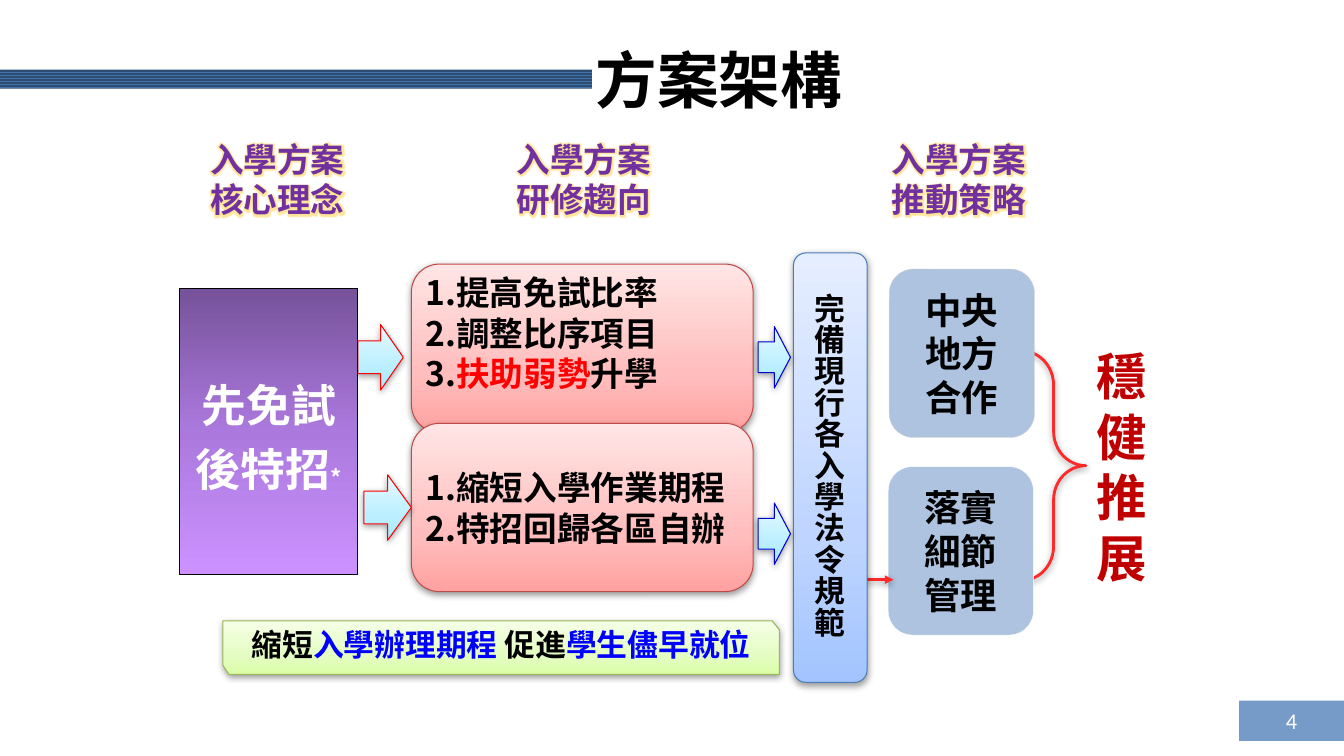
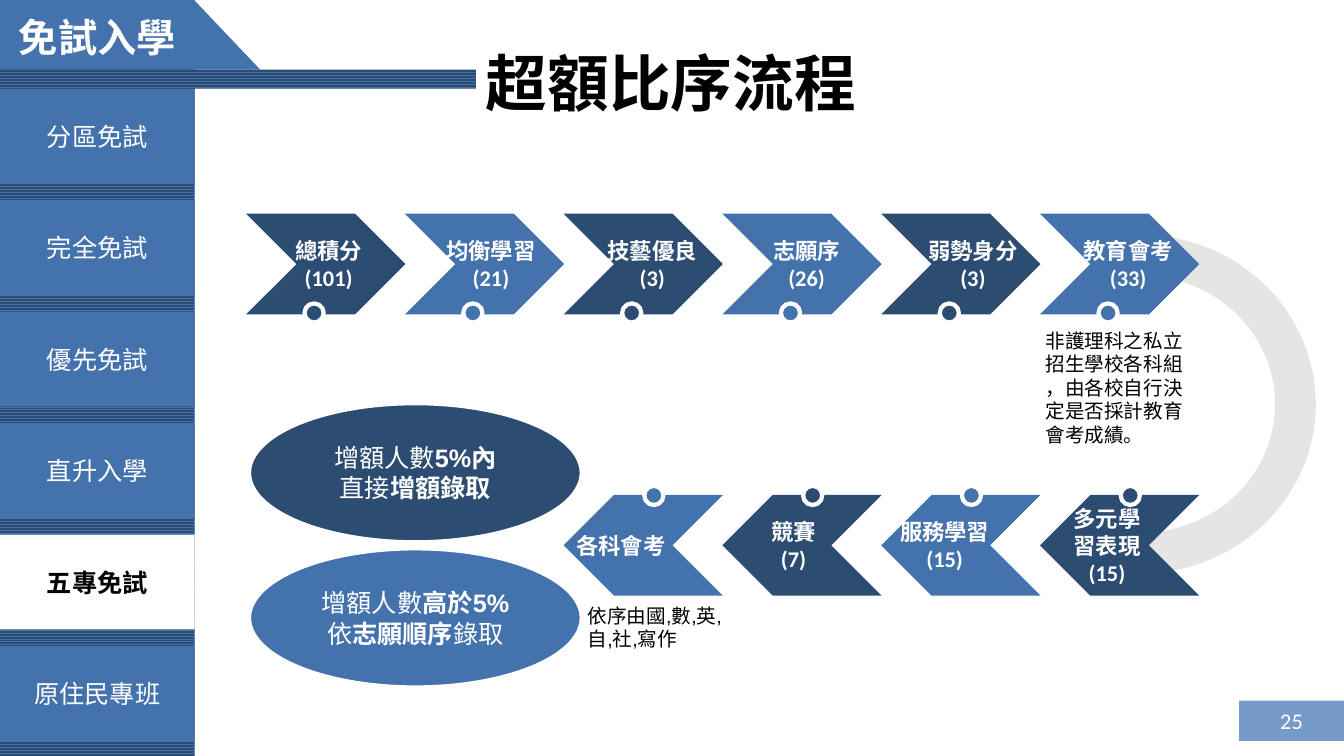
from copy import deepcopy

from pptx import Presentation
from pptx.dml.color import RGBColor
from pptx.enum.dml import MSO_PATTERN
from pptx.enum.shapes import MSO_CONNECTOR, MSO_SHAPE
from pptx.enum.text import MSO_ANCHOR, PP_ALIGN
from pptx.oxml import parse_xml
from pptx.oxml.ns import nsdecls, qn
from pptx.util import Inches, Pt

HUES = {
    "white": "FFFFFF", "black": "000000", "navy": "2D4C72", "blue": "4472AC",
    "sky": "769BC9", "mist": "ADC3DF", "gray": "E5E5E5", "silver": "CCCCCC",
    "red": "FF0000", "coral": "FE2929", "wine": "C00000", "plum": "7030A0",
    "ink": "0000FF", "deep": "0000CC", "brick": "BE4B48", "steel": "4A7EBB",
    "leaf": "98B954", "gold": "FFC000",
}
# Three stops each: place in percent and colour, then the angle
BLENDS = {
    "pink": (((0, "FFA2A1"), (35, "FFBEBD"), (100, "FFE5E5")), 270),
    "azure": (((0, "A3C4FF"), (35, "BFD5FF"), (100, "E5EEFF")), 270),
    "aqua": (((0, "9EEAFF"), (35, "BBEFFF"), (100, "E4F9FF")), 270),
    "lime": (((0, "DAFDA7"), (35, "E4FDC2"), (100, "F5FFE6")), 270),
    "violet": (((0, "76529A"), (50, "AB79DD"), (100, "CC91FF")), 90),
}
NOTO = "Noto Sans CJK SC"
NS = nsdecls("a")


def hue(name):
    return RGBColor.from_string(HUES[name])


def tint(name, alpha):
    return (f'<a:srgbClr val="{HUES[name]}">'
            f'<a:alpha val="{alpha * 1000}"/></a:srgbClr>')


class Deck:
    """Holds the shared style and the slide being drawn."""

    def __init__(self):
        self.file = Presentation()
        self.file.slide_width = Inches(13.33)
        self.file.slide_height = Inches(7.5)
        self.slide = None

    def start(self):
        self.slide = self.file.slides.add_slide(self.file.slide_layouts[6])

    def frame(self, title, page, at, band, face):
        """Draw the stripe, title and page number that all slides share."""
        self.shape(MSO_SHAPE.RECTANGLE, (0, 0.69, band, 0.19), "stripe")
        self.label(at, title, 44, "black", True, face=face, inset=0,
                   anchor=MSO_ANCHOR.TOP)
        foot = self.shape(MSO_SHAPE.RECTANGLE, (12.29, 6.95, 1.04, 0.4), "sky")
        self.letter(foot, page, 16, face="Calibri")

    def shape(self, kind, at, fill=None, line=None, width=0.75, cast=False):
        item = self.slide.shapes.add_shape(kind, *map(Inches, at))
        return self.paint(item, fill, line, width, cast)

    def outline(self, points, *look):
        first, *rest = [tuple(map(Inches, point)) for point in points]
        pen = self.slide.shapes.build_freeform(*first)
        pen.add_line_segments(rest, close=True)
        return self.paint(pen.convert_to_shape(), *look)

    def paint(self, item, fill, line=None, width=0.75, cast=False):
        if fill is None:
            item.fill.background()
        elif fill == "stripe":
            item.fill.patterned()
            item.fill.pattern = MSO_PATTERN.ZIG_ZAG
            item.fill.fore_color.rgb = hue("blue")
            item.fill.back_color.rgb = hue("navy")
        elif fill in BLENDS:
            self.blend(item, *BLENDS[fill])
        else:
            item.fill.solid()
            item.fill.fore_color.rgb = hue(fill)
        if line:
            item.line.color.rgb = hue(line)
            item.line.width = Pt(width)
        else:
            item.line.fill.background()
        item.shadow.inherit = False
        if cast:
            self.cast(item._element.spPr.find(qn("a:effectLst")))
        return item

    def blend(self, item, stops, angle):
        item.fill.gradient()
        item.fill.gradient_angle = 360 - angle
        marks = "".join(f'<a:gs pos="{pos * 1000}"><a:srgbClr val="{tone}"/></a:gs>'
                        for pos, tone in stops)
        grad = item._element.spPr.find(qn("a:gradFill"))
        grad.replace(grad.find(qn("a:gsLst")),
                     parse_xml(f"<a:gsLst {NS}>{marks}</a:gsLst>"))

    def cast(self, effects):
        """Put the soft drop shadow in an effect list."""
        effects.append(parse_xml(
            f'<a:outerShdw {NS} blurRad="63500" dist="20000" dir="5400000" '
            f'rotWithShape="0">{tint("black", 38)}</a:outerShdw>'))

    def arrow(self, start, end, color, width):
        line = self.slide.shapes.add_connector(
            MSO_CONNECTOR.STRAIGHT, *map(Inches, start + end))
        line.line.color.rgb = hue(color)
        line.line.width = Pt(width)
        line.line._get_or_add_ln().append(
            parse_xml(f'<a:tailEnd {NS} type="triangle"/>'))
        effects = parse_xml(f"<a:effectLst {NS}/>")
        line._element.spPr.append(effects)
        self.cast(effects)

    def label(self, at, text, size, color="white", bold=False, **look):
        box = self.slide.shapes.add_textbox(*map(Inches, at))
        return self.letter(box, text, size, color, bold, **look)

    def letter(self, item, text, size, color="white", bold=False, face=NOTO,
               align=PP_ALIGN.CENTER, anchor=MSO_ANCHOR.MIDDLE, inset=None,
               wrap=True, lead=None):
        """Set the text of a shape and its look."""
        frame = item.text_frame
        frame.text = text
        frame.word_wrap = wrap
        frame.vertical_anchor = anchor
        if inset is not None:
            frame.margin_left = frame.margin_right = Inches(inset)
            frame.margin_top = frame.margin_bottom = 0
        for para in frame.paragraphs:
            para.alignment = align
            if lead:
                para.line_spacing = lead
            for run in para.runs:
                font = run.font
                font.size, font.bold, font.name = Pt(size), bold, face
                font.color.rgb = hue(color)
                run._r.rPr.find(qn("a:latin")).addnext(
                    parse_xml(f'<a:ea {NS} typeface="{NOTO}"/>'))
        return item

    def mark(self, item, word, color=None, size=None, bold=None):
        """Give one word in the text a look of its own."""
        for para in item.text_frame.paragraphs:
            for run in para.runs:
                head, hit, tail = run.text.partition(word)
                if not hit:
                    continue
                for text in filter(None, (tail, hit)):
                    twin = deepcopy(run._r)
                    twin.text = text
                    run._r.addnext(twin)
                run.text = head
                if not head:
                    para._p.remove(run._r)
            for run in para.runs:
                if run.text == word:
                    if color:
                        run.font.color.rgb = hue(color)
                    if size:
                        run.font.size = Pt(size)
                    if bold is not None:
                        run.font.bold = bold

    def glow(self, item):
        for para in item.text_frame.paragraphs:
            for run in para.runs:
                run._r.rPr.find(qn("a:solidFill")).addnext(parse_xml(
                    f'<a:effectLst {NS}><a:glow rad="63500">'
                    f'{tint("gold", 40)}</a:glow></a:effectLst>'))


def draw_plan(deck):
    deck.start()
    deck.frame("方案架構", "4", (3.4, 0.42, 7.46, 0.74), 5.87, "Arial")

    brace = deck.shape(MSO_SHAPE.RIGHT_BRACE, (10.13, 3.48, 0.64, 2.28),
                       None, "coral", 2, True)
    brace.adjustments[0] = 0.53
    deck.label((10.71, 3.11, 0.84, 3.03), "穩健推展", 36, "wine", True, inset=0)

    trends = (
        (2.62, "1.提高免試比率\n2.調整比序項目\n3.扶助弱勢升學", MSO_ANCHOR.TOP),
        (4.2, "1.縮短入學作業期程\n2.特招回歸各區自辦", MSO_ANCHOR.MIDDLE),
    )
    for top, text, anchor in trends:
        card = deck.shape(MSO_SHAPE.ROUNDED_RECTANGLE, (4.08, top, 3.39, 1.67),
                          "pink", "brick", cast=True)
        deck.letter(card, text, 24, "black", True, align=PP_ALIGN.LEFT,
                    anchor=anchor, inset=0.06)
        deck.mark(card, "扶助弱勢", "red")

    tasks = ((8.82, 2.67, "中央\n地方\n合作", "silver"),
             (8.81, 4.63, "落實\n細節\n管理", "white"))
    for left, top, text, edge in tasks:
        card = deck.shape(MSO_SHAPE.ROUNDED_RECTANGLE, (left, top, 1.44, 1.67),
                          "mist", edge, 0.25)
        deck.letter(card, text, 26, "black", True, inset=0)
    deck.arrow((8.56, 5.75), (8.86, 5.75), "coral", 2)

    for left, text in ((1.78, "核心理念"), (4.82, "研修趨向"), (8.54, "推動策略")):
        head = deck.label((left, 1.33, 1.94, 0.91), "入學方案\n" + text, 24,
                          "plum", True, anchor=MSO_ANCHOR.TOP)
        deck.glow(head)

    law = deck.shape(MSO_SHAPE.FLOWCHART_ALTERNATE_PROCESS,
                     (7.87, 2.51, 0.73, 4.26), "azure", "steel", cast=True)
    deck.letter(law, "完備現行各入學法令規範", 22, "black", True, lead=0.85)

    for *at, edge in ((3.55, 3.22, 0.45, 0.65, "red"),
                      (3.61, 4.71, 0.47, 0.65, "red"),
                      (7.52, 3.24, 0.32, 0.61, "deep"),
                      (7.52, 4.99, 0.32, 0.61, "deep")):
        deck.shape(MSO_SHAPE.RIGHT_ARROW, at, "aqua", edge, cast=True)

    goal = deck.outline(((2.21, 6.16), (7.66, 6.16), (7.73, 6.25), (7.73, 6.69),
                         (2.27, 6.69), (2.21, 6.6)), "lime", "leaf", 0.75, True)
    deck.letter(goal, "縮短入學辦理期程 促進學生儘早就位", 22, "black", True, lead=0.8)
    for word in ("入學辦理期程", "學生儘早就位"):
        deck.mark(goal, word, "ink")

    core = deck.shape(MSO_SHAPE.RECTANGLE, (1.78, 2.86, 1.77, 2.84),
                      "violet", "black")
    deck.letter(core, "先免試\n後特招*", 32, bold=True, wrap=False, lead=1.2)
    deck.mark(core, "*", size=16)


def draw_menu(deck):
    deck.shape(MSO_SHAPE.ISOSCELES_TRIANGLE, (1.27, 0, 1.31, 0.69), "blue")
    tab = deck.shape(MSO_SHAPE.RECTANGLE, (0, 0, 1.93, 0.73), "blue")
    deck.letter(tab, "免試入學", 28, bold=True, face="Calibri")
    deck.shape(MSO_SHAPE.RECTANGLE, (0, 0.86, 1.93, 6.64), "stripe")
    names = ("分區免試", "完全免試", "優先免試", "直升入學", "五專免試", "原住民專班")
    first, last = 0.88, 6.41
    for i, name in enumerate(names):
        here = name == "五專免試"
        top = first + i * (last - first) / (len(names) - 1)
        item = deck.shape(MSO_SHAPE.RECTANGLE, (0, top, 1.93, 0.94),
                          "white" if here else "blue")
        deck.letter(item, name, 18, "black" if here else "white", here,
                    face="Calibri")


def draw_row(deck, left, top, dot, turn, tones, steps):
    """Draw a row of chevrons; dot is the offset of each small circle."""
    pitch = 6.3 / 4
    for i, (text, mid) in enumerate(steps):
        x, tone = left + i * pitch, tones[i % 2]
        for kind, at, edge in (
                (MSO_SHAPE.CHEVRON, (x, top, 1.58, 1), None),
                (MSO_SHAPE.OVAL, (x + dot[0], top + dot[1], 0.19, 0.19), "white")):
            deck.shape(kind, at, tone, edge, 3).rotation = turn
        deck.label((mid - 0.8, top, 1.6, 1), text, 16, bold=True, face="Calibri")


def draw_flow(deck):
    deck.start()
    draw_menu(deck)
    deck.frame("超額比序流程", "25", (3.08, 0.45, 7.15, 0.74), 4.72, "Calibri")

    arc = deck.shape(MSO_SHAPE.BLOCK_ARC, (9.63, 2.27, 3.36, 3.48), "gray")
    arc.rotation = 90
    for i, value in enumerate((108, 0.41, 0.12)):
        arc.adjustments[i] = value

    rules = ((4, "navy", "增額人數5%內\n直接增額錄取", ("5%內", "增額錄取")),
             (5.44, "blue", "增額人數高於5%\n依志願順序錄取", ("高於5%", "志願順序")))
    for top, tone, text, words in rules:
        oval = deck.shape(MSO_SHAPE.OVAL, (2.47, top, 3.3, 1.38), tone, "white", 3)
        deck.letter(oval, text, 18, face="Arial")
        for word in words:
            deck.mark(oval, word, bold=True)

    draw_row(deck, 2.44, 2.12, (0.58, 0.89), 0, ("navy", "blue"), (
        ("總積分\n(101)", 3.26), ("均衡學習\n(21)", 4.87), ("技藝優良\n(3)", 6.47),
        ("志願序\n(26)", 8), ("弱勢身分\n(3)", 9.65), ("教育會考\n(33)", 11.19)))
    draw_row(deck, 5.59, 4.91, (0.8, -0.09), 180, ("blue", "navy"), (
        ("各科會考", 6.16), ("競賽\n(7)", 7.87), ("服務學習\n(15)", 9.37),
        ("多元學\n習表現\n(15)", 10.98)))

    notes = (((5.73, 5.94, 1.54, 0.8), "依序由國,數,英,\n自,社,寫作", "Arial"),
             ((10.27, 3.21, 1.6, 1.28), "非護理科之私立\n招生學校各科組\n，由各校自行決\n"
              "定是否採計教育\n會考成績。", "Calibri"))
    for at, text, face in notes:
        deck.label(at, text, 14, "black", face=face, align=PP_ALIGN.LEFT,
                   anchor=MSO_ANCHOR.TOP)


def main():
    deck = Deck()
    draw_plan(deck)
    draw_flow(deck)
    deck.file.save("out.pptx")


if __name__ == "__main__":
    main()
